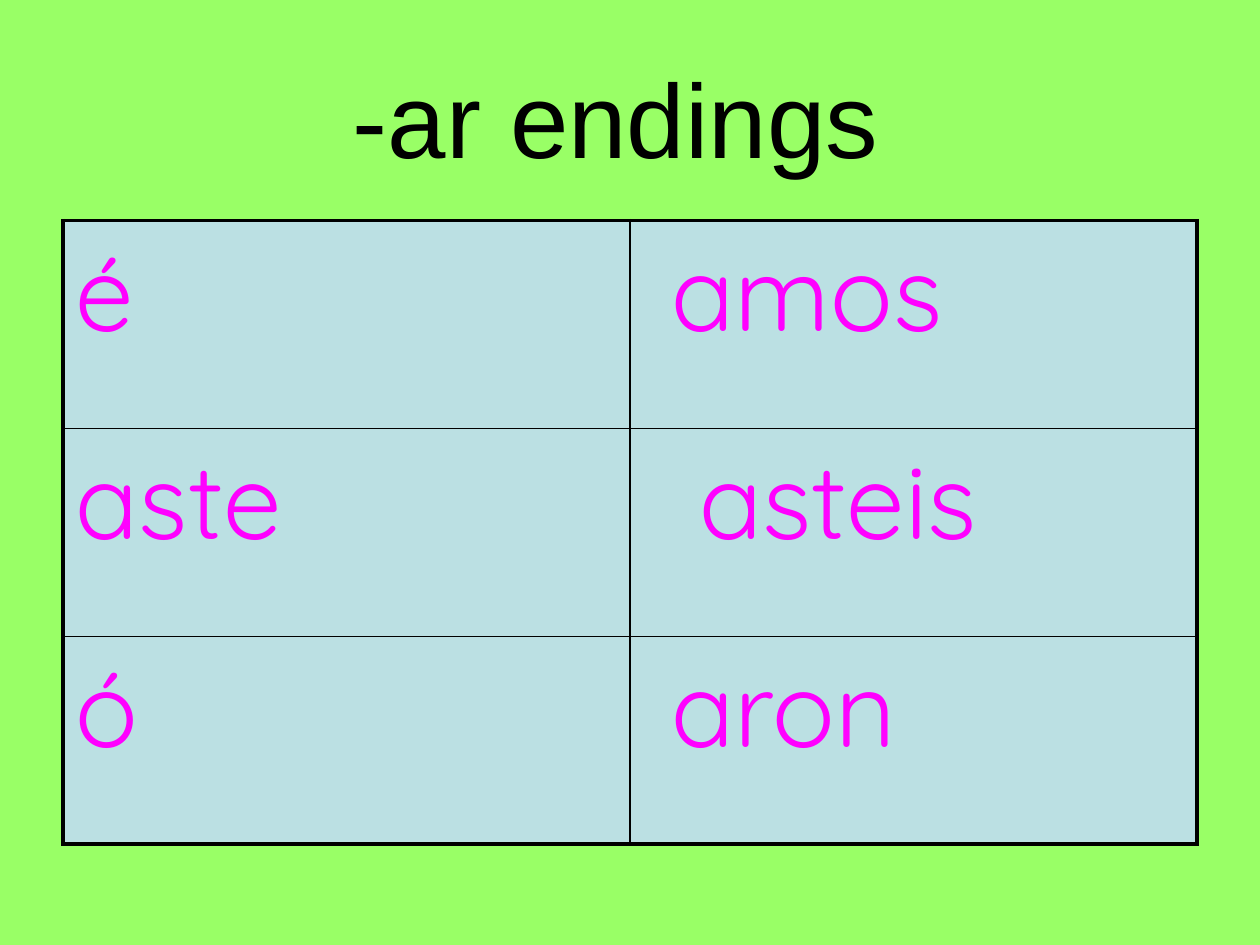
"""Build a slide with a table of -ar verb endings."""
from lxml.etree import SubElement
from pptx import Presentation
from pptx.dml.color import RGBColor
from pptx.enum.text import MSO_ANCHOR, PP_ALIGN
from pptx.oxml.ns import qn
from pptx.util import Inches, Pt

COLORS = {"back": "99FF66", "cell": "BBE0E3", "ending": "FF00FF", "black": "000000"}
ROWS = [("é", "amos"), ("aste", "asteis"), ("ó", "aron")]
INDENTS = [(0, 0.23), (0, 0.45), (0, 0.23)]


def style_text(tf, font, color):
    for r in tf.paragraphs[0].runs:
        r.font.name = font
        r.font.size = Pt(60)
        r.font.color.rgb = RGBColor.from_string(COLORS[color])


def add_border(cell, side, width):
    ln = SubElement(cell._tc.get_or_add_tcPr(), qn(f"a:ln{side}"), w=str(Pt(width)))
    fill = SubElement(ln, qn("a:solidFill"))
    SubElement(fill, qn("a:srgbClr"), val=COLORS["black"])


prs = Presentation()
prs.slide_width, prs.slide_height = Inches(10), Inches(7.5)
s = prs.slides.add_slide(prs.slide_layouts[5])
s.background.fill.solid()
s.background.fill.fore_color.rgb = RGBColor.from_string(COLORS["back"])

title = s.shapes.title
title.left, title.top = Inches(0.5), Inches(0.3)
title.width, title.height = Inches(9), Inches(1.25)
tf = title.text_frame
tf.text = "-ar endings "
tf.vertical_anchor = MSO_ANCHOR.MIDDLE
tf.paragraphs[0].alignment = PP_ALIGN.CENTER
style_text(tf, "Arial", "black")

table = s.shapes.add_table(3, 2, Inches(0.5), Inches(1.75), Inches(9), Inches(4.95)).table
table.first_row = table.horz_banding = False
for i, (endings, indents) in enumerate(zip(ROWS, INDENTS)):
    for j, (ending, indent) in enumerate(zip(endings, indents)):
        cell = table.cell(i, j)
        cell.margin_left = Inches(0.1 + indent)
        cell.text_frame.text = ending
        style_text(cell.text_frame, "Quicksand", "ending")
        outer = {"L": j == 0, "R": j == 1, "T": i == 0, "B": i == 2}
        for side, is_outer in outer.items():
            add_border(cell, side, 2.25 if is_outer else 1)
        cell.fill.solid()
        cell.fill.fore_color.rgb = RGBColor.from_string(COLORS["cell"])

prs.save("out.pptx")
